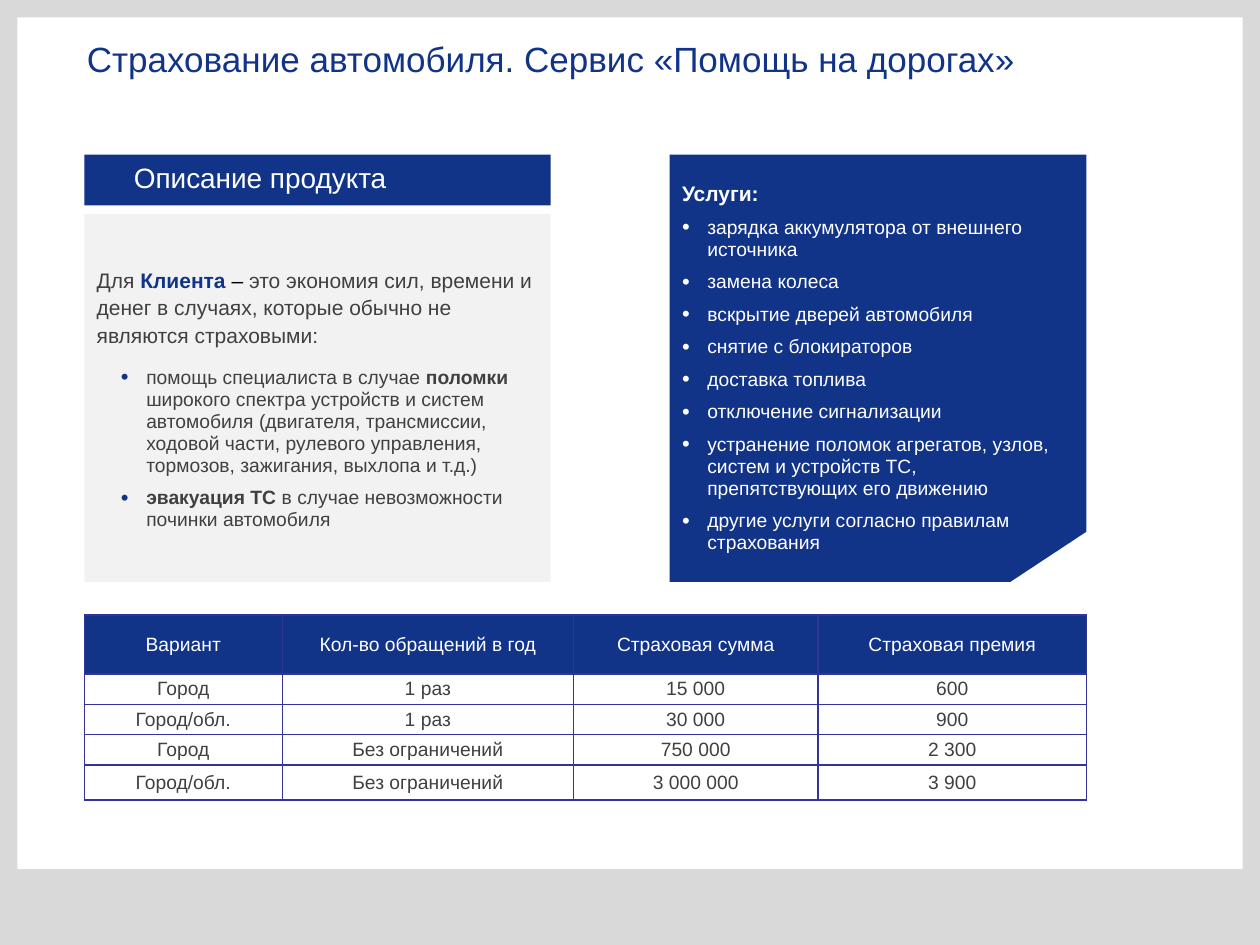
"""Build the slide on roadside assistance in car insurance."""
import pptx
import pptx.dml.color
import pptx.enum.shapes
import pptx.enum.text
import pptx.oxml.ns
import pptx.util
from lxml import etree

Cm, Pt = pptx.util.Cm, pptx.util.Pt
MIDDLE = pptx.enum.text.MSO_ANCHOR.MIDDLE
NAVY, WHITE, TEXT = "113388", "FFFFFF", "404040"
BACKDROP, PANEL, GRID = "D9D9D9", "F2F2F2", "333399"

TITLE = "Страхование автомобиля. Сервис «Помощь на дорогах»"
HEADING = "Описание продукта"
INTRO = [
    ("Для ", False, TEXT),
    ("Клиента", True, NAVY),
    (" – ", False, "000000"),
    ("это экономия сил, времени и денег в случаях, которые обычно не являются страховыми:", False, TEXT),
]
BENEFITS = [
    [
        ("помощь специалиста в случае ", False, TEXT),
        ("поломки", True, TEXT),
        (" широкого спектра устройств и систем автомобиля (двигателя, трансмиссии, "
         "ходовой части, рулевого управления, тормозов, зажигания, выхлопа и т.д.)", False, TEXT),
    ],
    [("эвакуация ТС", True, TEXT), (" в случае невозможности починки автомобиля", False, TEXT)],
]
SERVICES_HEADING = "Услуги:"
SERVICES = [
    "зарядка аккумулятора от внешнего источника",
    "замена колеса",
    "вскрытие дверей автомобиля",
    "снятие с блокираторов",
    "доставка топлива",
    "отключение сигнализации",
    "устранение поломок агрегатов, узлов, систем и устройств ТС, препятствующих его движению",
    "другие услуги согласно правилам страхования",
]
TARIFFS = [
    ("Вариант", "Кол-во обращений в год", "Страховая сумма", "Страховая премия"),
    ("Город", "1 раз", "15 000", "600"),
    ("Город/обл.", "1 раз", "30 000", "900"),
    ("Город", "Без ограничений", "750 000", "2 300"),
    ("Город/обл.", "Без ограничений", "3 000 000", "3 900"),
]
COLUMN_WIDTHS = (3.99, 5.87, 4.93, 5.41)
ROW_HEIGHTS = (1.19, 0.61, 0.61, 0.61, 0.71)

LEFT, RIGHT, TOP, BOTTOM = 1.7, 21.9, 3.12, 11.73
PANEL_WIDTH, HEADING_HEIGHT, PANEL_TOP = 9.4, 1.02, 4.32
SERVICES_LEFT, CUT_LEFT, CUT_TOP = 13.5, 20.37, 10.72
TABLE_TOP = 12.4


def rgb(value):
    return pptx.dml.color.RGBColor.from_string(value)


def paint(shape, color):
    shape.shadow.inherit = False
    shape.fill.solid()
    shape.fill.fore_color.rgb = rgb(color)
    shape.line.fill.background()


def add_block(slide, left, top, width, height, color):
    block = slide.shapes.add_shape(
        pptx.enum.shapes.MSO_SHAPE.RECTANGLE, Cm(left), Cm(top), Cm(width), Cm(height))
    paint(block, color)
    return block


def set_frame(frame, margins=(0.25, 0.13, 0.25, 0.13), anchor=MIDDLE):
    frame.word_wrap = True
    frame.vertical_anchor = anchor
    frame.margin_left, frame.margin_top, frame.margin_right, frame.margin_bottom = map(Cm, margins)
    return frame


def set_font(paragraph, size, color, bold=False):
    font = paragraph.font
    font.name, font.size, font.bold = "Arial", Pt(size), bold
    font.color.rgb = rgb(color)


def add_element(parent, tag, **attributes):
    return etree.SubElement(parent, pptx.oxml.ns.qn(tag), attributes)


def set_bullet(paragraph, color, indent):
    paragraph.level = 1
    properties = paragraph._p.get_or_add_pPr()
    properties.set("marL", str(Cm(indent)))
    properties.set("indent", str(Cm(-0.51)))
    add_element(add_element(properties, "a:buClr"), "a:srgbClr", val=color)
    add_element(properties, "a:buSzPct", val="115000")
    add_element(properties, "a:buFont", typeface="Arial")
    add_element(properties, "a:buChar", char="•")


def write(paragraph, text, size, color, spacing=None, before=None, bold=False,
          bullet=None, indent=0.51):
    if spacing:
        paragraph.line_spacing = spacing
    if before:
        paragraph.space_before = Pt(before)
    paragraph.alignment = pptx.enum.text.PP_ALIGN.LEFT
    if bullet:
        set_bullet(paragraph, bullet, indent)
    set_font(paragraph, size, color, bold)
    if isinstance(text, str):
        paragraph.add_run().text = text
        return
    for words, strong, shade in text:
        run = paragraph.add_run()
        run.text = words
        if strong:
            run.font.bold = True
        if shade != color:
            run.font.color.rgb = rgb(shade)


def add_title(slide):
    title = slide.shapes.add_textbox(Cm(1.5), Cm(0.79), Cm(23.39), Cm(0.94))
    frame = set_frame(title.text_frame, anchor=pptx.enum.text.MSO_ANCHOR.TOP)
    write(frame.paragraphs[0], TITLE, 20, NAVY, 0.8)


def add_description(slide):
    heading = add_block(slide, LEFT, TOP, PANEL_WIDTH, HEADING_HEIGHT, NAVY)
    frame = set_frame(heading.text_frame, (1, 0, 1, 0))
    write(frame.paragraphs[0], HEADING, 16, WHITE, 0.8)

    panel = add_block(slide, LEFT, PANEL_TOP, PANEL_WIDTH, BOTTOM - PANEL_TOP, PANEL)
    frame = set_frame(panel.text_frame)
    write(frame.paragraphs[0], INTRO, 12, TEXT, 1.1)
    for benefit, before in zip(BENEFITS, (11, 6)):
        write(frame.add_paragraph(), benefit, 11, TEXT, 0.95, before, bullet=NAVY, indent=1)


def add_services(slide):
    corners = [(CUT_LEFT, BOTTOM), (RIGHT, CUT_TOP), (RIGHT, TOP), (SERVICES_LEFT, TOP)]
    outline = slide.shapes.build_freeform(Cm(SERVICES_LEFT), Cm(BOTTOM))
    outline.add_line_segments([(Cm(x), Cm(y)) for x, y in corners], close=True)
    services = outline.convert_to_shape()
    paint(services, NAVY)
    frame = set_frame(services.text_frame, (0.25, 0.13, 0.61, 0.13))
    write(frame.paragraphs[0], SERVICES_HEADING, 12, WHITE, 0.95, bold=True)
    for service in SERVICES:
        write(frame.add_paragraph(), service, 11, WHITE, 0.95, 6, bullet=WHITE)


def set_borders(cell):
    properties = cell._tc.get_or_add_tcPr()
    for side in ("a:lnL", "a:lnR", "a:lnT", "a:lnB"):
        line = add_element(properties, side, w=str(Pt(1)))
        add_element(add_element(line, "a:solidFill"), "a:srgbClr", val=GRID)


def add_tariffs(slide):
    tariffs = slide.shapes.add_table(
        len(TARIFFS), len(COLUMN_WIDTHS), Cm(LEFT), Cm(TABLE_TOP),
        Cm(sum(COLUMN_WIDTHS)), Cm(sum(ROW_HEIGHTS))).table
    tariffs.first_row = tariffs.horz_banding = False
    for column, width in zip(tariffs.columns, COLUMN_WIDTHS):
        column.width = Cm(width)
    for number, (row, height, values) in enumerate(zip(tariffs.rows, ROW_HEIGHTS, TARIFFS)):
        row.height = Cm(height)
        background, color = (WHITE, TEXT) if number else (NAVY, WHITE)
        for cell, value in zip(row.cells, values):
            set_borders(cell)
            cell.fill.solid()
            cell.fill.fore_color.rgb = rgb(background)
            cell.vertical_anchor = MIDDLE
            cell.margin_left = cell.margin_right = Cm(0.18)
            cell.margin_top = cell.margin_bottom = 0
            paragraph = cell.text_frame.paragraphs[0]
            write(paragraph, value, 11, color)
            paragraph.alignment = pptx.enum.text.PP_ALIGN.CENTER


def main():
    deck = pptx.Presentation()
    deck.slide_width, deck.slide_height = Cm(25.4), Cm(19.05)
    slide = deck.slides.add_slide(deck.slide_layouts[6])
    add_block(slide, 0, 0, 25.4, 19.05, BACKDROP)
    add_block(slide, 0.35, 0.35, 24.7, 17.17, WHITE)
    add_title(slide)
    add_description(slide)
    add_tariffs(slide)
    add_services(slide)
    deck.save("out.pptx")


if __name__ == "__main__":
    main()
